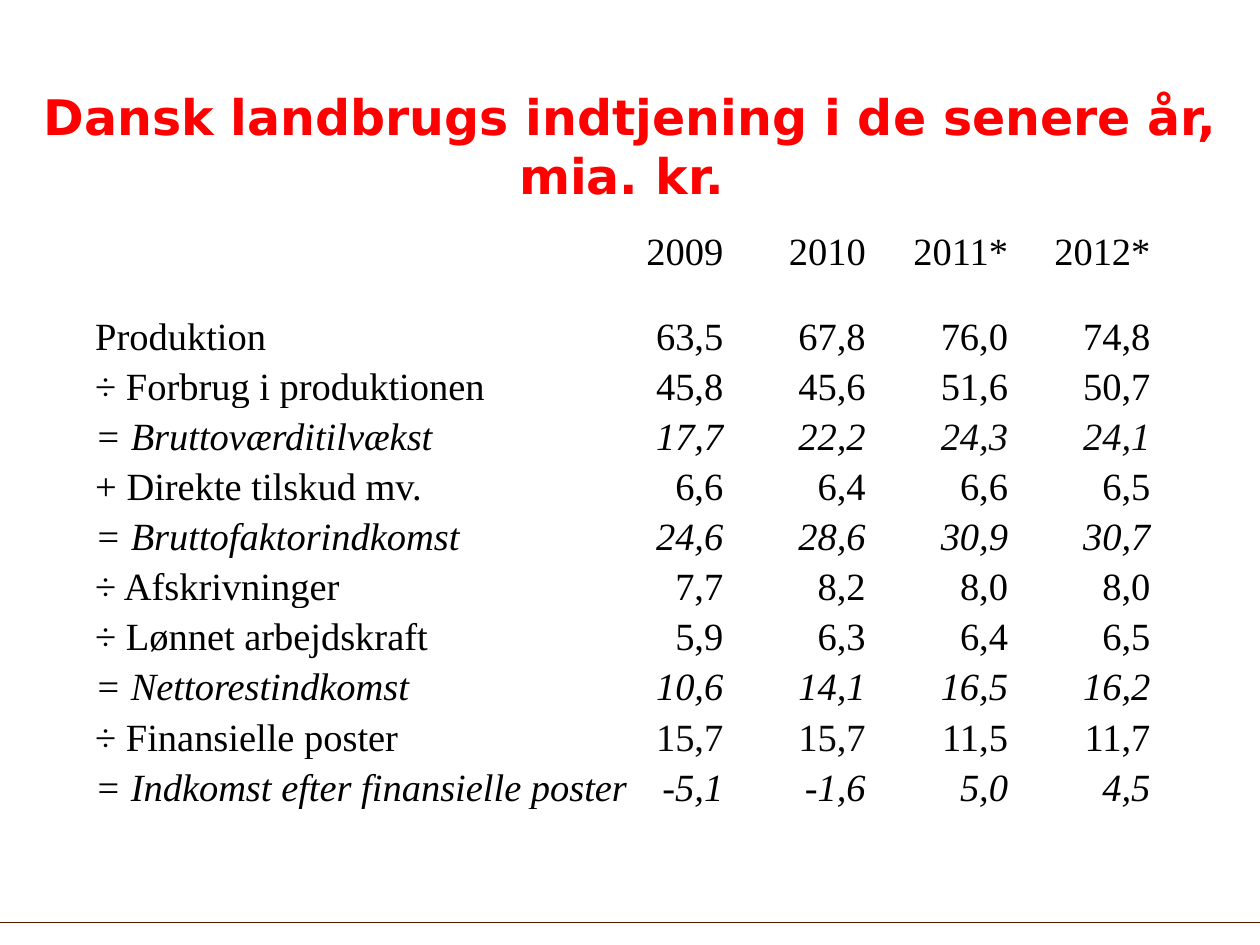
from lxml.etree import SubElement
from pptx import Presentation
from pptx.dml.color import RGBColor as RGB
from pptx.enum.shapes import MSO_CONNECTOR as CONN
from pptx.enum.text import MSO_ANCHOR as ANCHOR, PP_ALIGN as ALIGN
from pptx.oxml.ns import qn
from pptx.util import Cm, Pt

COLORS = {"title": "FF0000", "text": "000000", "soft": "0A0A0A", "rule": "541800"}
TITLE = "Dansk landbrugs indtjening i de senere år, mia. kr. "
ROWS = [
    ("", "2009", "2010", "2011*", "2012*"),
    ("Produktion", "63,5", "67,8", "76,0", "74,8"),
    ("÷ Forbrug i produktionen", "45,8", "45,6", "51,6", "50,7"),
    ("= Bruttoværditilvækst", "17,7", "22,2", "24,3", "24,1"),
    ("+ Direkte tilskud mv.", "6,6", "6,4", "6,6", "6,5"),
    ("= Bruttofaktorindkomst", "24,6", "28,6", "30,9", "30,7"),
    ("÷ Afskrivninger", "7,7", "8,2", "8,0", "8,0"),
    ("÷ Lønnet arbejdskraft", "5,9", "6,3", "6,4", "6,5"),
    ("= Nettorestindkomst", "10,6", "14,1", "16,5", "16,2"),
    ("÷ Finansielle poster", "15,7", "15,7", "11,5", "11,7"),
    ("= Indkomst efter finansielle poster", "-5,1", "-1,6", "5,0", "4,5"),
]
COL_WIDTHS = (11.0, 1.7, 2.87, 2.87, 2.87)
ROW_HEIGHT, GAP_ROW_HEIGHT = 1.01, 1.7
SOFT_CELLS = {(3, 3), (3, 4), (9, 1), (9, 2)}


def add_run(p, text, font, size, color, bold=False, italic=False):
    """Add one formatted run to a paragraph."""
    r = p.add_run()
    r.text = text
    r.font.name, r.font.size = font, Pt(size)
    r.font.bold, r.font.italic = bold, italic
    r.font.color.rgb = RGB.from_string(COLORS[color])


def add_title(s, x, y, w, h):
    """Place the centred title at the bottom of its box."""
    tf = s.shapes.add_textbox(Cm(x), Cm(y), Cm(w), Cm(h)).text_frame
    tf.word_wrap = True
    tf.vertical_anchor = ANCHOR.BOTTOM
    tf.margin_left = tf.margin_right = tf.margin_top = tf.margin_bottom = 0
    p = tf.paragraphs[0]
    p.alignment = ALIGN.CENTER
    add_run(p, TITLE, "DejaVu Sans", 28, "title", bold=True)


def fill_cell(cell, text, color, numeric, italic):
    """Write one table cell without fill."""
    cell.fill.background()
    cell.vertical_anchor = ANCHOR.BOTTOM
    cell.margin_left = cell.margin_right = cell.margin_top = Cm(0.02)
    cell.margin_bottom = 0
    if text:
        p = cell.text_frame.paragraphs[0]
        p.alignment = ALIGN.RIGHT if numeric else ALIGN.LEFT
        add_run(p, text, "Times New Roman", 22, color, italic=italic)


def add_income_table(s, x, y, w, h):
    """Place the income table, with result rows in italics."""
    table = s.shapes.add_table(len(ROWS), len(COL_WIDTHS), Cm(x), Cm(y), Cm(w), Cm(h)).table
    table.first_row = table.horz_banding = False
    for col, width in zip(table.columns, COL_WIDTHS):
        col.width = Cm(width)
    for i, row in enumerate(ROWS):
        table.rows[i].height = Cm(GAP_ROW_HEIGHT if i == 1 else ROW_HEIGHT)
        for j, text in enumerate(row):
            color = "soft" if (i, j) in SOFT_CELLS else "text"
            fill_cell(table.cell(i, j), text, color, j > 0, row[0].startswith("="))


def add_footer_rule(s, x, y, w):
    """Draw the thin line above the footer."""
    line = s.shapes.add_connector(CONN.STRAIGHT, Cm(x + w), Cm(y), Cm(x), Cm(y))
    line.line.color.rgb = RGB.from_string(COLORS["rule"])
    line.line.width = Pt(0.75)
    SubElement(line._element.spPr, qn("a:effectLst"))


def main():
    """Build and save the slide."""
    prs = Presentation()
    prs.slide_width, prs.slide_height = Cm(25.4), Cm(19.05)
    s = prs.slides.add_slide(prs.slide_layouts[6])
    add_footer_rule(s, 0, 18.6, 25.4)
    add_title(s, 0.3, 1.52, 24.8, 2.6)
    height = GAP_ROW_HEIGHT + ROW_HEIGHT * (len(ROWS) - 1)
    add_income_table(s, 1.9, 4.52, sum(COL_WIDTHS), height)
    prs.save("out.pptx")


if __name__ == "__main__":
    main()
